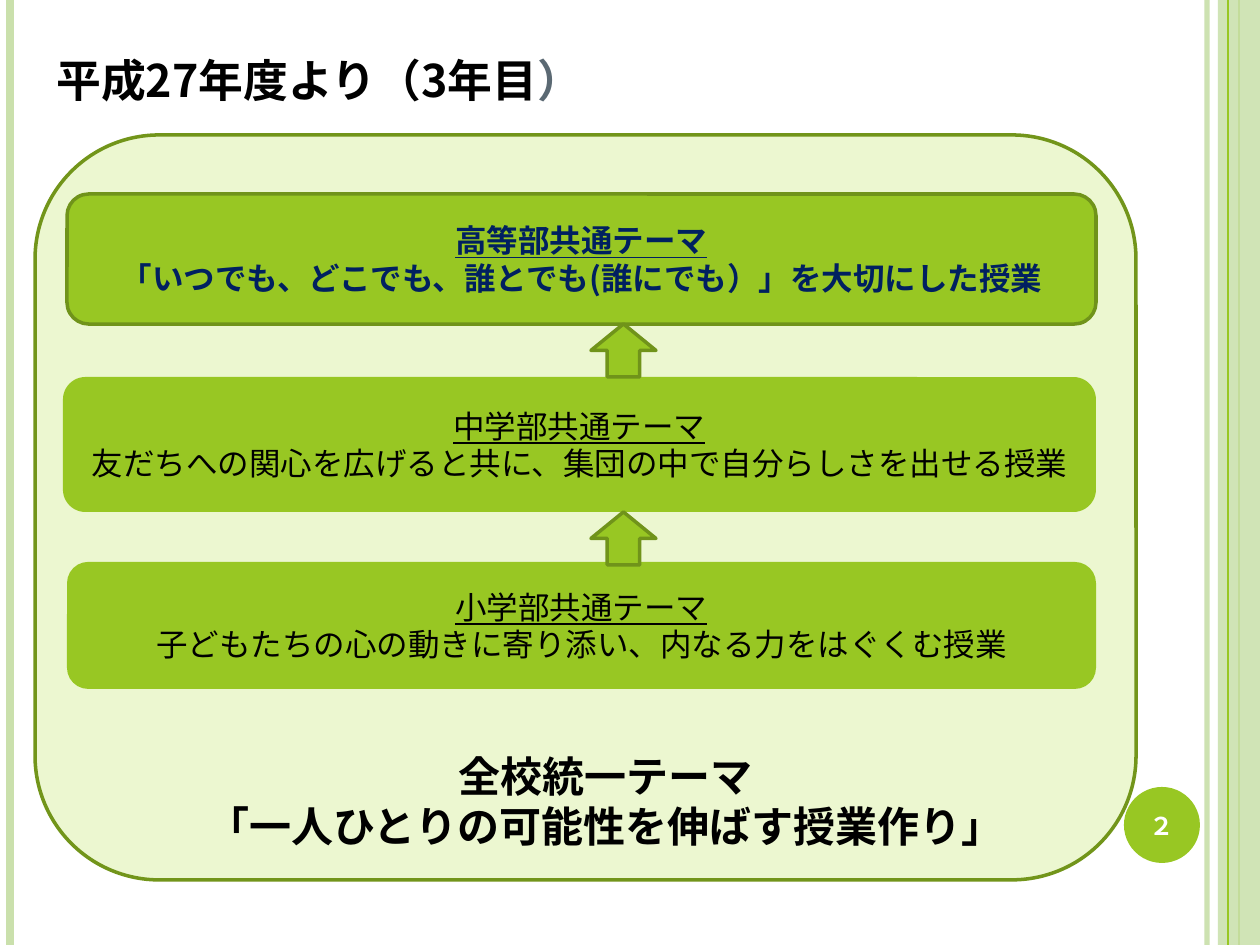
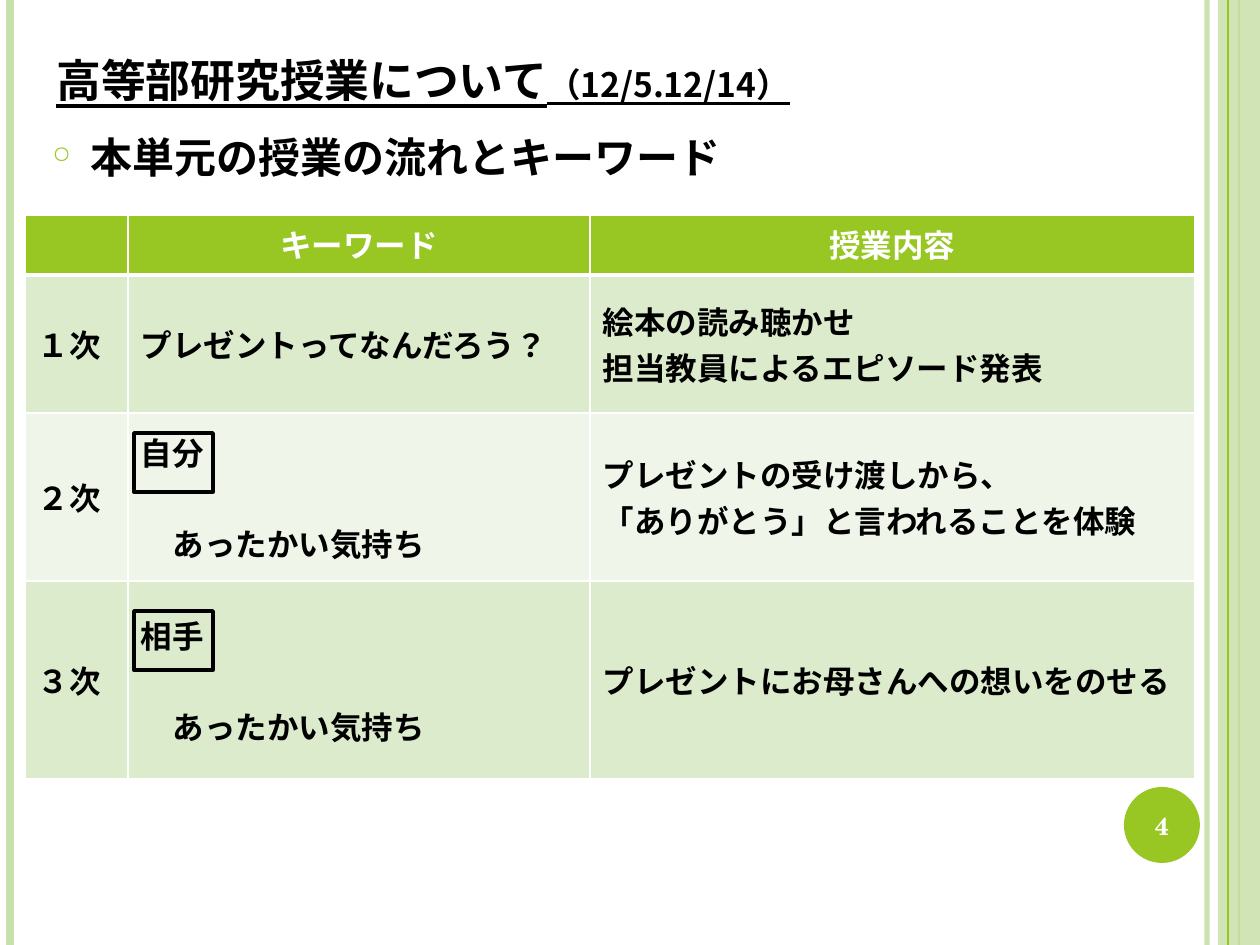
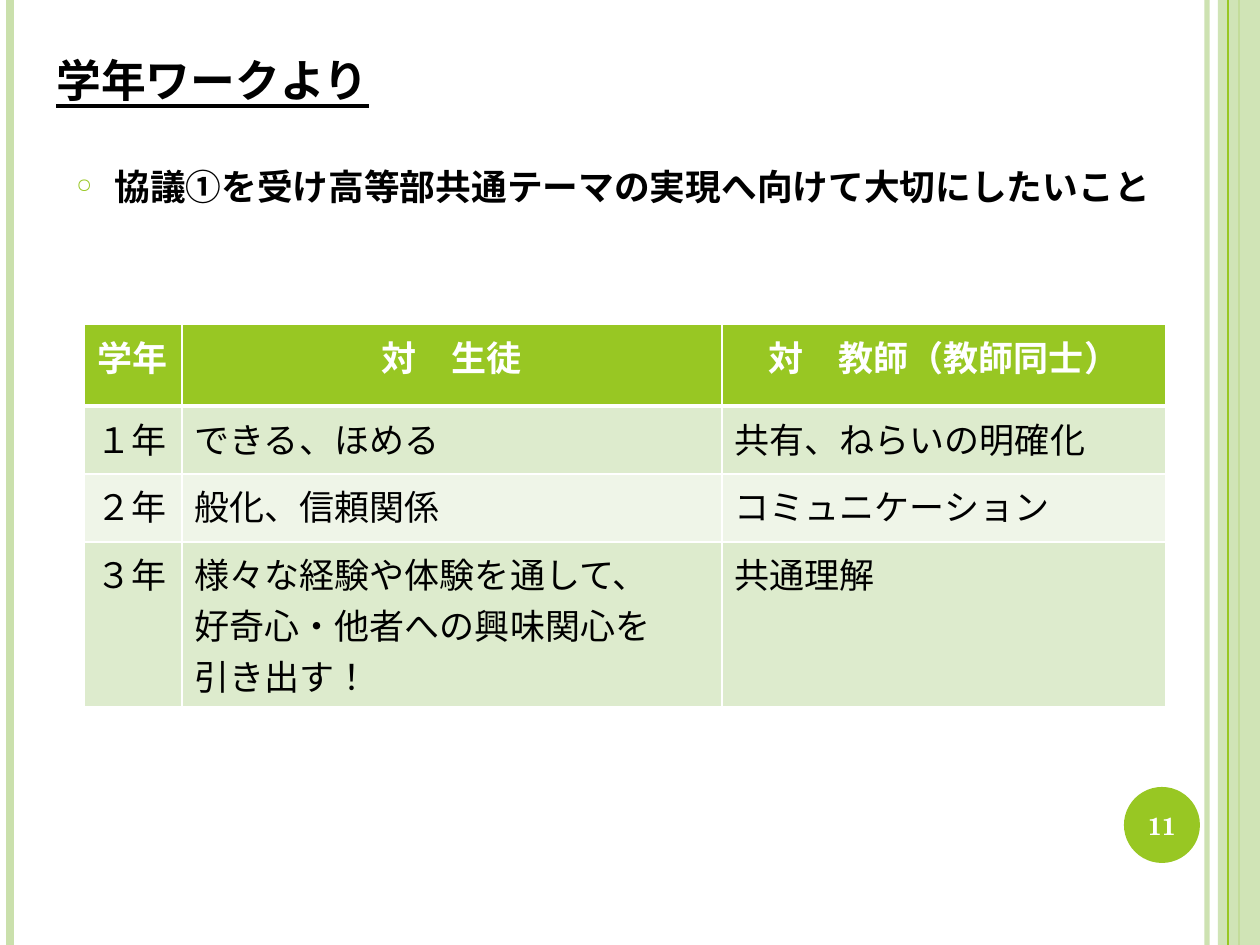
from lxml import etree
from pptx import Presentation
from pptx import util as u
from pptx.dml.color import RGBColor
from pptx.enum import lang, shapes, text as t
from pptx.oxml.ns import qn

PX = 914400 / 126
WIDTH, HEIGHT = 1260, 945
GOTHIC, SCHOLA = "Noto Sans CJK JP", "TeX Gyre Schola"
COLORS = {
    "white": "FFFFFF",
    "black": "000000",
    "green": "98C723",
    "edge": "70931A",
    "panel_edge": "72951A",
    "panel": "ECF7D0",
    "rail": "CAE0AC",
    "odd_row": "DDEBCD",
    "even_row": "EFF5E8",
    "navy": "002060",
    "slate": "5B6973",
}
SHAPE = shapes.MSO_SHAPE
ALIGN, ANCHOR = t.PP_ALIGN, t.MSO_ANCHOR


def px(*lengths):
    return [u.Emu(round(length * PX)) for length in lengths]


def rgb(name):
    return RGBColor.from_string(COLORS[name])


def add_xml(parent, tag, **attributes):
    return etree.SubElement(parent, qn(tag), {k: str(v) for k, v in attributes.items()})


def set_opacity(element, percent):
    for color in element.spPr.iter(qn("a:srgbClr")):
        add_xml(color, "a:alpha", val=percent * 1000)


def style_run(run, size=18, color="black", bold=False, underline=False,
              font=GOTHIC, small_caps=False):
    run.font.size = u.Pt(size)
    run.font.color.rgb = rgb(color)
    run.font.bold = bold
    run.font.underline = underline
    run.font.name = font
    run.font.language_id = lang.MSO_LANGUAGE_ID.JAPANESE
    properties = run.font._element
    add_xml(properties, "a:ea", typeface=GOTHIC)
    if small_caps:
        properties.set("cap", "small")


def write(frame, lines, align=ALIGN.LEFT, **style):
    frame.word_wrap = True
    for index, line in enumerate(lines):
        paragraph = frame.paragraphs[0] if index == 0 else frame.add_paragraph()
        paragraph.alignment = align
        for words, changes in [(line, {})] if isinstance(line, str) else line:
            run = paragraph.add_run()
            run.text = words
            style_run(run, **{**style, **changes})


def add_text(slide, box, lines, anchor=ANCHOR.TOP, **style):
    frame = slide.shapes.add_textbox(*px(*box)).text_frame
    frame.vertical_anchor = anchor
    write(frame, lines, **style)
    return frame


def add_block(slide, kind, box, fill=None, edge=None, opacity=None):
    block = slide.shapes.add_shape(kind, *px(*box))
    block.shadow.inherit = False
    if fill:
        block.fill.solid()
        block.fill.fore_color.rgb = rgb(fill)
    else:
        block.fill.background()
    if edge:
        block.line.color.rgb = rgb(edge)
        block.line.width = u.Pt(2)
    else:
        block.line.fill.background()
    if opacity:
        set_opacity(block._element, opacity)
    return block


def add_rail(slide, x, color, weight, opacity=None):
    rail = slide.shapes.add_connector(shapes.MSO_CONNECTOR.STRAIGHT, *px(x, 0, x, HEIGHT))
    rail.line.color.rgb = rgb(color)
    rail.line.width = u.Pt(weight)
    if opacity:
        set_opacity(rail._element, opacity)
    add_xml(rail._element.spPr, "a:effectLst")


def add_page(deck, number):
    slide = deck.slides.add_slide(deck.slide_layouts[6])
    add_rail(slide, 1207, "rail", 3, opacity=93)
    add_rail(slide, 10, "rail", 4.5)
    add_rail(slide, 1239, "green", 1.5)
    add_block(slide, SHAPE.RECTANGLE, (1218, 0, 42, HEIGHT), "rail", opacity=87)
    add_rail(slide, 1228, "green", 0.75)
    add_block(slide, SHAPE.OVAL, (1124, 787, 76, 76), "green")
    add_text(slide, (1120, 790, 84, 72), [number], anchor=ANCHOR.MIDDLE,
             align=ALIGN.CENTER, size=14, color="white", bold=True, font=SCHOLA)
    return slide


def add_title(slide, runs, underline=True):
    add_text(slide, (44, 39, 1120, 76), [runs], anchor=ANCHOR.BOTTOM,
             size=32, bold=True, underline=underline, small_caps=True)


def add_bullet(slide, box, line, size):
    paragraph = add_text(slide, box, [line], size=size, bold=True).paragraphs[0]
    paragraph.space_before = u.Pt(6)
    properties = paragraph._p.get_or_add_pPr()
    indent = px(38)[0]
    properties.set("marL", str(indent))
    properties.set("indent", str(-indent))
    add_xml(add_xml(properties, "a:buClr"), "a:srgbClr", val=COLORS["green"])
    add_xml(properties, "a:buSzPct", val=56000)
    add_xml(properties, "a:buChar", char="○")


def add_theme(slide, box, name, motto, edge=None, **style):
    card = add_block(slide, SHAPE.ROUNDED_RECTANGLE, box, "green", edge)
    card.text_frame.vertical_anchor = ANCHOR.MIDDLE
    write(card.text_frame, [[(name, {"underline": True})], motto],
          align=ALIGN.CENTER, **style)


def set_borders(cell, top, bottom):
    properties = cell._tc.get_or_add_tcPr()
    for position, (side, weight) in enumerate(
            [("L", 1), ("R", 1), ("T", top), ("B", bottom)]):
        border = etree.Element(qn(f"a:ln{side}"), {"w": str(u.Pt(weight))})
        fill = add_xml(border, "a:solidFill")
        add_xml(fill, "a:srgbClr", val=COLORS["white"])
        properties.insert(position, border)


def add_grid(slide, corner, columns, heights, rows, size, bold, anchor):
    box = (*corner, sum(columns), sum(heights))
    grid = slide.shapes.add_table(len(rows), len(columns), *px(*box)).table
    grid.horz_banding = False
    for column, width in zip(grid.columns, px(*columns)):
        column.width = width
    for row, height in zip(grid.rows, px(*heights)):
        row.height = height
    for r, row in enumerate(rows):
        header = r == 0
        fill = "green" if header else "odd_row" if r % 2 else "even_row"
        for c, words in enumerate(row):
            cell = grid.cell(r, c)
            cell.fill.solid()
            cell.fill.fore_color.rgb = rgb(fill)
            cell.vertical_anchor = ANCHOR.TOP if header else anchor
            set_borders(cell, 3 if r == 1 else 1, 3 if header else 1)
            if words:
                write(cell.text_frame, words.split("\n"), size=size,
                      align=ALIGN.CENTER if header else ALIGN.LEFT,
                      color="white" if header else "black", bold=header or bold)
    return grid


def build_themes(deck):
    slide = add_page(deck, "２")
    add_block(slide, SHAPE.ROUNDED_RECTANGLE, (35, 135, 1101, 745), "panel", "panel_edge")
    add_title(slide, [("平成27年度より（3年目", {}), ("）", {"color": "slate"})],
              underline=False)
    add_text(slide, (163, 721, 885, 159),
             ["全校統一テーマ", "「一人ひとりの可能性を伸ばす授業作り」"],
             anchor=ANCHOR.MIDDLE, align=ALIGN.CENTER, size=24, bold=True)
    add_theme(slide, (67, 562, 1029, 127), "小学部共通テーマ",
              "子どもたちの心の動きに寄り添い、内なる力をはぐくむ授業")
    add_theme(slide, (63, 377, 1033, 135), "中学部共通テーマ",
              "友だちへの関心を広げると共に、集団の中で自分らしさを出せる授業")
    add_theme(slide, (67, 194, 1029, 130), "高等部共通テーマ",
              "「いつでも、どこでも、誰とでも(誰にでも）」を大切にした授業",
              edge="edge", color="navy", bold=True)
    for top in (324, 512):
        add_block(slide, SHAPE.UP_ARROW, (591, top, 65, 53), "green", "edge")


def build_lessons(deck):
    slide = add_page(deck, "4")
    grid = add_grid(
        slide, (25, 215), (103, 462, 605), (60, 138, 168, 198),
        [("", "キーワード", "授業内容"),
         ("１次", "プレゼントってなんだろう？", "絵本の読み聴かせ\n担当教員によるエピソード発表"),
         ("２次", "自分\nあったかい気持ち",
          "プレゼントの受け渡しから、\n「ありがとう」と言われることを体験"),
         ("３次", "相手\nあったかい気持ち", "プレゼントにお母さんへの想いをのせる")],
        size=18, bold=True, anchor=ANCHOR.MIDDLE)
    for row in (2, 3):
        feeling = grid.cell(row, 1).text_frame.paragraphs[1]
        feeling.space_before = u.Pt(26)
        feeling._p.get_or_add_pPr().set("marL", str(px(32)[0]))
    add_bullet(slide, (40, 125, 1036, 76), "本単元の授業の流れとキーワード", 24)
    add_title(slide, [("高等部研究授業について", {}), ("（12/5.12/14）", {"size": 24})])
    for top in (433, 611):
        add_block(slide, SHAPE.RECTANGLE, (134, top, 79, 59), edge="black")


def build_grades(deck):
    slide = add_page(deck, "11")
    add_grid(
        slide, (84, 324), (98, 540, 444), (82, 68, 68, 165),
        [("学年", "対　生徒", "対　教師（教師同士）"),
         ("１年", "できる、ほめる", "共有、ねらいの明確化"),
         ("２年", "般化、信頼関係", "コミュニケーション"),
         ("３年", "様々な経験や体験を通して、\n好奇心・他者への興味関心を\n引き出す！", "共通理解")],
        size=20, bold=False, anchor=ANCHOR.TOP)
    add_title(slide, [("学年ワークより", {})])
    add_bullet(slide, (64, 159, 1121, 76),
               "協議①を受け高等部共通テーマの実現へ向けて大切にしたいこと", 20.4)


def main():
    deck = Presentation()
    deck.slide_width, deck.slide_height = px(WIDTH, HEIGHT)
    build_themes(deck)
    build_lessons(deck)
    build_grades(deck)
    deck.save("out.pptx")


if __name__ == "__main__":
    main()
